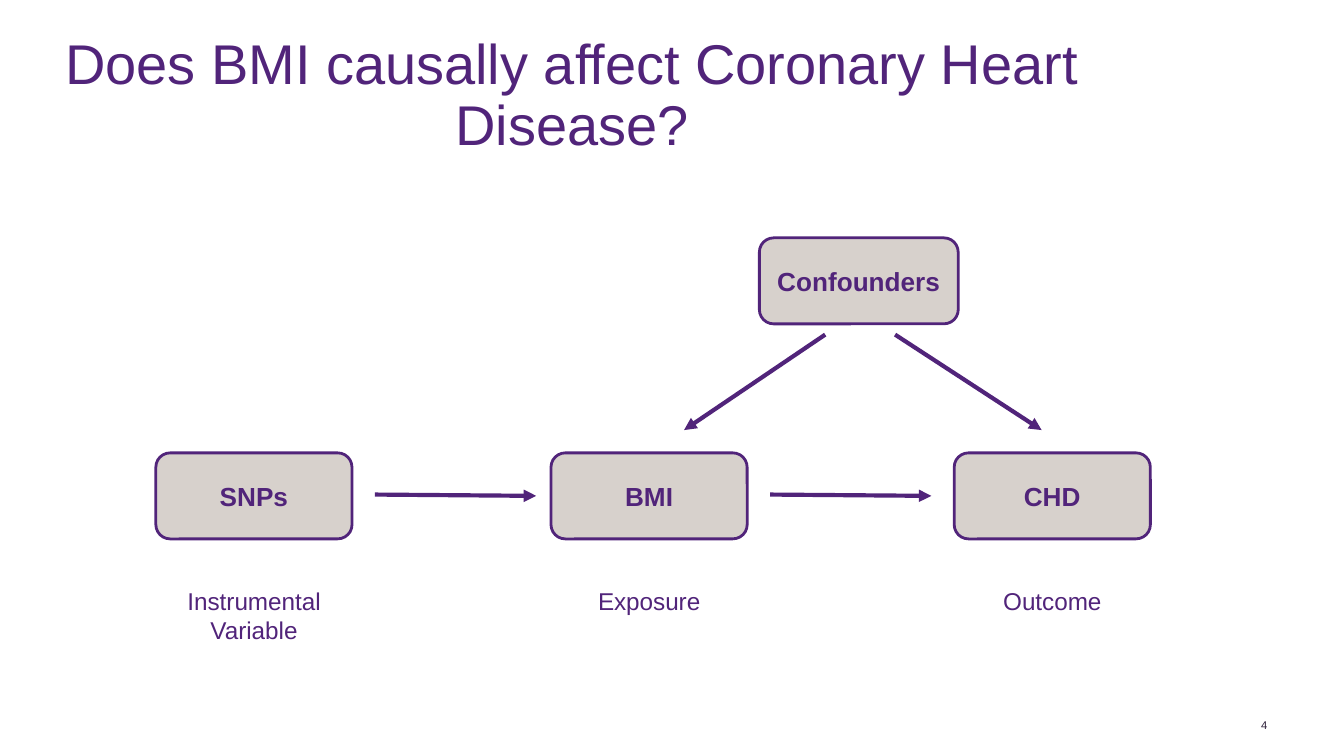
"""Build a causal diagram slide linking SNPs, BMI, heart disease and confounders."""
from lxml import etree
from pptx import Presentation
from pptx import util as u
from pptx.dml.color import RGBColor
from pptx.enum import shapes, text
from pptx.oxml import ns

PURPLE = RGBColor(0x51, 0x24, 0x7A)
STONE = RGBColor(0xD7, 0xD1, 0xCC)
DARK = RGBColor(0x2B, 0x1D, 0x37)


def write(shape, wording, size, color=PURPLE, bold=False, inset=0.1,
          anchor=text.MSO_ANCHOR.TOP, align=text.PP_ALIGN.CENTER):
    frame = shape.text_frame
    frame.text = wording
    frame.word_wrap = True
    frame.auto_size = text.MSO_AUTO_SIZE.NONE
    frame.vertical_anchor = anchor
    frame.margin_left = frame.margin_right = u.Inches(inset)
    frame.margin_top = frame.margin_bottom = u.Inches(inset)
    paragraph = frame.paragraphs[0]
    paragraph.alignment = align
    paragraph.font.name = "Arial"
    paragraph.font.size = u.Pt(size)
    paragraph.font.bold = bold
    paragraph.font.color.rgb = color
    return paragraph


presentation = Presentation()
presentation.slide_width = u.Inches(10)
presentation.slide_height = u.Inches(10) * 9 // 16
slide = presentation.slides.add_slide(presentation.slide_layouts[5])

title = slide.shapes.title
title.left, title.top = u.Inches(0.02), u.Inches(0.27)
title.width, title.height = u.Inches(8.47), u.Inches(0.38)
heading = write(title, "Does BMI causally affect Coronary Heart Disease?", 30, inset=0)
heading.line_spacing = 0.9

number = slide.shapes.add_textbox(u.Inches(9.19), u.Inches(5.35), u.Inches(0.24), u.Inches(0.09))
write(number, "4", 6, DARK, inset=0, anchor=text.MSO_ANCHOR.MIDDLE, align=text.PP_ALIGN.RIGHT)

nodes = [
    ("SNPs", 1.16, 3.37, 1.46, "Instrumental Variable"),
    ("BMI", 4.1, 3.37, 1.46, "Exposure"),
    ("Confounders", 5.65, 1.77, 1.48, None),
    ("CHD", 7.1, 3.37, 1.46, "Outcome"),
]
for name, left, top, width, role in nodes:
    node = slide.shapes.add_shape(shapes.MSO_SHAPE.ROUNDED_RECTANGLE, u.Inches(left),
                                  u.Inches(top), u.Inches(width), u.Inches(0.64))
    node.shadow.inherit = False
    node.fill.solid()
    node.fill.fore_color.rgb = STONE
    node.line.color.rgb = PURPLE
    node.line.width = u.Pt(1.5)
    write(node, name, 14, bold=True, anchor=text.MSO_ANCHOR.MIDDLE)
    if role:
        caption = slide.shapes.add_textbox(u.Inches(left + 0.08), u.Inches(4.26),
                                           u.Inches(1.3), u.Inches(0.58))
        write(caption, role, 13)

arrows = [
    (2.79, 3.68, 3.99, 3.69),
    (5.73, 3.68, 6.93, 3.69),
    (6.14, 2.49, 5.09, 3.2),
    (6.66, 2.49, 7.75, 3.2),
]
for ends in arrows:
    arrow = slide.shapes.add_connector(shapes.MSO_CONNECTOR.STRAIGHT, *map(u.Inches, ends))
    arrow.line.color.rgb = PURPLE
    arrow.line.width = u.Pt(2.25)
    properties = arrow.element.spPr
    etree.SubElement(properties.find(ns.qn("a:ln")), ns.qn("a:tailEnd"), type="triangle")
    etree.SubElement(properties, ns.qn("a:effectLst"))

presentation.save("out.pptx")
